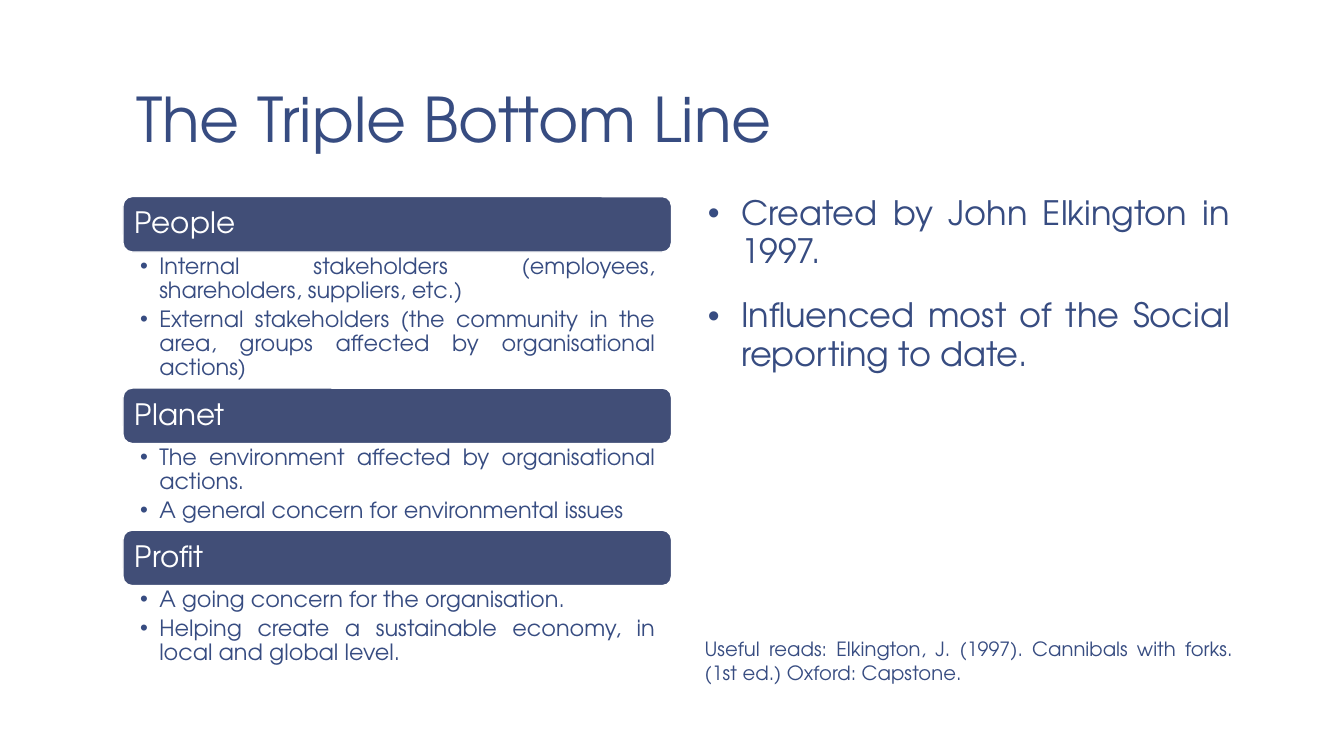
import pptx
import pptx.util
import pptx.dml.color
import pptx.enum.shapes
import pptx.enum.text
import pptx.oxml
import pptx.oxml.ns

Inches = pptx.util.Inches
Pt = pptx.util.Pt
ALIGN = pptx.enum.text.PP_ALIGN
ANCHOR = pptx.enum.text.MSO_ANCHOR

NAVY = pptx.dml.color.RGBColor(0x37, 0x4C, 0x81)
SLATE = pptx.dml.color.RGBColor(0x41, 0x4E, 0x77)
WHITE = pptx.dml.color.RGBColor(0xFF, 0xFF, 0xFF)
FONT = "TeX Gyre Adventor"


def set_frame(frame, insets, anchor=ANCHOR.TOP):
    frame.word_wrap = True
    frame.auto_size = pptx.enum.text.MSO_AUTO_SIZE.NONE
    frame.vertical_anchor = anchor
    left, top, right, bottom = insets
    frame.margin_left, frame.margin_top = Inches(left), Inches(top)
    frame.margin_right, frame.margin_bottom = Inches(right), Inches(bottom)


def write(frame, texts, size, color=NAVY, align=ALIGN.JUSTIFY, spacing=1.0, before=0, after=0, indent=0):
    for index, text in enumerate(texts):
        paragraph = frame.paragraphs[0] if index == 0 else frame.add_paragraph()
        paragraph.text = text
        paragraph.alignment = align
        paragraph.line_spacing = spacing
        paragraph.space_before = Pt(before if index else 0)
        paragraph.space_after = Pt(after)
        if indent:
            properties = paragraph._p.get_or_add_pPr()
            properties.set("marL", str(Inches(indent)))
            properties.set("indent", str(-Inches(indent)))
            namespace = pptx.oxml.ns.nsdecls("a")
            properties.append(pptx.oxml.parse_xml(f'<a:buFont {namespace} typeface="Arial"/>'))
            properties.append(pptx.oxml.parse_xml(f'<a:buChar {namespace} char="•"/>'))
        paragraph.font.name = FONT
        paragraph.font.size = Pt(size)
        paragraph.font.color.rgb = color


presentation = pptx.Presentation()
presentation.slide_width = Inches(13.33)
presentation.slide_height = Inches(7.5)
slide = presentation.slides.add_slide(presentation.slide_layouts[5])

# Title
WIDE_INSETS = (0.13, 0.07, 0.13, 0.07)
title = slide.shapes.title
title.left, title.top, title.width, title.height = Inches(1.22), Inches(0.08), Inches(11.11), Inches(1.53)
set_frame(title.text_frame, WIDE_INSETS, ANCHOR.BOTTOM)
write(title.text_frame, ["The Triple Bottom Line"], 44, align=ALIGN.LEFT, spacing=0.85)

# The three pillars: a header bar with its bullets below
COLUMN_WIDTH = 5.44
PILLAR_LEFT = 1.22
HEADER_HEIGHT = 0.55
pillars = [
    ("People", 1.35, [
        "Internal stakeholders (employees, shareholders, suppliers, etc.)",
        "External stakeholders (the community in the area, groups affected by organisational actions)",
    ]),
    ("Planet", 0.86, [
        "The environment affected by organisational actions.",
        "A general concern for environmental issues",
    ]),
    ("Profit", 0.86, [
        "A going concern for the organisation.",
        "Helping create a sustainable economy, in local and global level.",
    ]),
]
top = 1.95
for name, bullets_height, bullets in pillars:
    header = slide.shapes.add_shape(
        pptx.enum.shapes.MSO_SHAPE.ROUNDED_RECTANGLE,
        Inches(PILLAR_LEFT), Inches(top), Inches(COLUMN_WIDTH), Inches(HEADER_HEIGHT))
    header.shadow.inherit = False
    header.fill.solid()
    header.fill.fore_color.rgb = SLATE
    header.line.color.rgb = WHITE
    header.line.width = Pt(1)
    set_frame(header.text_frame, (0.09, 0.09, 0.09, 0.09), ANCHOR.MIDDLE)
    write(header.text_frame, [name], 21, WHITE, ALIGN.LEFT, spacing=0.9)
    top += HEADER_HEIGHT

    details = slide.shapes.add_textbox(
        Inches(PILLAR_LEFT), Inches(top), Inches(COLUMN_WIDTH), Inches(bullets_height))
    set_frame(details.text_frame, (0.17, 0.03, 0.16, 0.03))
    write(details.text_frame, bullets, 16, spacing=0.9, after=3.2, indent=0.19)
    top += bullets_height

# Background points
RIGHT_LEFT = 6.89
points = slide.shapes.add_textbox(Inches(RIGHT_LEFT), Inches(1.86), Inches(COLUMN_WIDTH), Inches(4.41))
set_frame(points.text_frame, WIDE_INSETS)
write(points.text_frame, [
    "Created by John Elkington in 1997.",
    "Influenced most of the Social reporting to date.",
], 24, spacing=0.95, before=18.7, indent=0.33)

# Further reading
reading = slide.shapes.add_textbox(Inches(RIGHT_LEFT), Inches(6.27), Inches(COLUMN_WIDTH), Inches(0.57))
set_frame(reading.text_frame, (0.1, 0.05, 0.1, 0.05))
write(reading.text_frame, [
    "Useful reads: Elkington, J. (1997). Cannibals with forks. (1st ed.) Oxford: Capstone.",
], 14)

presentation.save("out.pptx")
